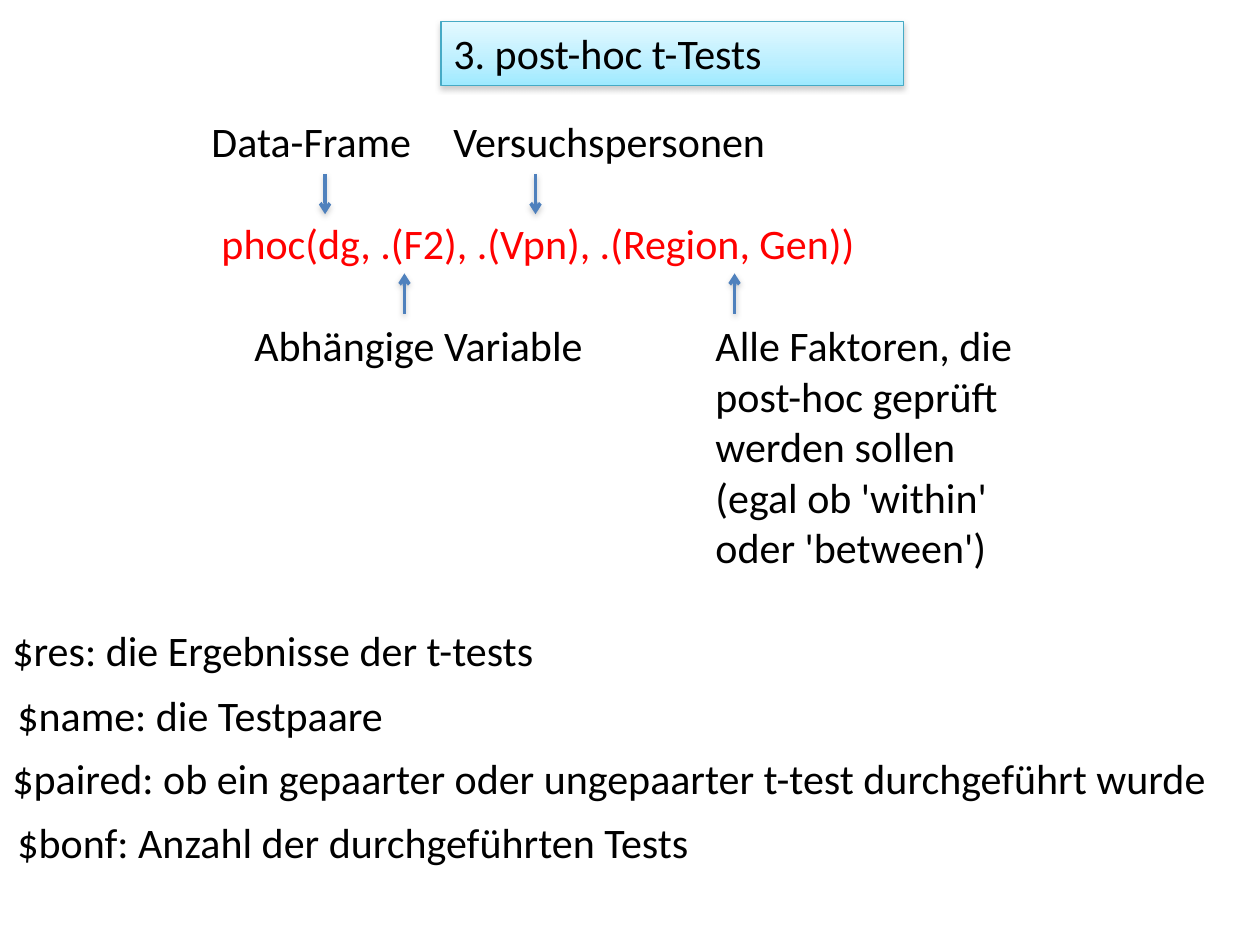
from copy import deepcopy
from typing import NamedTuple

from lxml import etree
from pptx import Presentation
from pptx import util as u
from pptx.dml.color import RGBColor
from pptx.enum import shapes, text
from pptx.oxml import parse_xml
from pptx.oxml.ns import nsdecls, qn

HUES = {"ink": "000000", "code": "FF0000", "arrow": "4F81BD",
        "edge": "46AAC5", "shade": "808080"}
BLEND = [(0, "E4F9FF"), (0.65, "BBEFFF"), (1, "9EEAFF")]


class Label(NamedTuple):
    words: str
    left: float
    top: float
    width: float
    height: float = 0.51
    hue: str = "ink"
    wrap: bool = True


class Arrow(NamedTuple):
    x: float
    start: float
    end: float


TITLE = Label("3. post-hoc t-Tests", 3.5, 0.17, 3.67)
LABELS = [
    Label("phoc(dg, .(F2), .(Vpn), .(Region, Gen))", 1.66, 1.68, 5.3, hue="code"),
    Label("Data-Frame", 1.58, 0.87, 2.08),
    Label("Versuchspersonen", 3.5, 0.87, 2.92),
    Label("Abhängige Variable", 1.92, 2.49, 2.83),
    Label("Alle Faktoren, die post-hoc geprüft werden sollen "
          "(egal ob 'within' oder 'between')", 5.58, 2.49, 2.58, 2.12),
]
RESULTS = [
    ("$res: die Ergebnisse der t-tests", 0, 4.41, False),
    ("$name: die Testpaare", 0.04, 3.17, False),
    ("$paired: ob ein gepaarter oder ungepaarter t-test durchgeführt wurde",
     0, 10.25, True),
    ("$bonf: Anzahl der durchgeführten Tests", 0.04, 5.64, False),
]
LABELS += [Label(words, left, round(4.91 + 0.507 * row, 2), width, wrap=wrap)
           for row, (words, left, width, wrap) in enumerate(RESULTS)]
ARROWS = [Arrow(3.21, 2.49, 2.17), Arrow(2.58, 1.38, 1.7),
          Arrow(5.83, 2.49, 2.17), Arrow(4.25, 1.38, 1.7)]


def tint(name: str) -> RGBColor:
    """Return the named colour."""
    return RGBColor.from_string(HUES[name])


def shade(shape) -> None:
    """Put a soft shadow below a shape or line."""
    shape._element.spPr.append(parse_xml(
        f'<a:effectLst {nsdecls("a")}><a:outerShdw blurRad="{u.Pt(3.1)}" '
        f'dist="{u.Pt(1.6)}" dir="5400000" rotWithShape="0">'
        f'<a:srgbClr val="{HUES["shade"]}"><a:alpha val="38000"/></a:srgbClr>'
        '</a:outerShdw></a:effectLst>'))


def area(label: Label) -> list[u.Length]:
    """Return the position and size of a label."""
    return [u.Inches(n) for n in (label.left, label.top, label.width, label.height)]


def write(shape, label: Label) -> None:
    """Set and format the text of a shape."""
    frame = shape.text_frame
    frame.text = label.words
    frame.word_wrap = label.wrap
    frame.auto_size = text.MSO_AUTO_SIZE.SHAPE_TO_FIT_TEXT
    frame.vertical_anchor = text.MSO_ANCHOR.TOP
    line = frame.paragraphs[0]
    line.alignment = text.PP_ALIGN.LEFT
    font = line.runs[0].font
    font.name, font.size = "Calibri", u.Pt(24)
    font.color.rgb = tint(label.hue)


def draw_label(slide, label: Label) -> None:
    """Add a plain text box."""
    write(slide.shapes.add_textbox(*area(label)), label)


def draw_arrow(slide, arrow: Arrow) -> None:
    """Add a vertical arrow."""
    x, start, end = (u.Inches(n) for n in arrow)
    line = slide.shapes.add_connector(
        shapes.MSO_CONNECTOR.STRAIGHT, x, start, x, end)
    line.line.color.rgb = tint("arrow")
    line.line.width = u.Pt(2)
    etree.SubElement(line.line._get_or_add_ln(), qn("a:tailEnd"), type="arrow")
    shade(line)


def draw_title(slide, label: Label) -> None:
    """Add the title box with its gradient."""
    box = slide.shapes.add_shape(shapes.MSO_SHAPE.RECTANGLE, *area(label))
    box.fill.gradient()
    box.fill.gradient_angle = 270
    stops = next(box._element.spPr.iter(qn("a:gsLst")))
    stops.append(deepcopy(stops[-1]))
    for stop, (place, hue) in zip(box.fill.gradient_stops, BLEND):
        stop.position = place
        stop.color.rgb = RGBColor.from_string(hue)
    box.line.color.rgb = tint("edge")
    box.line.width = u.Pt(0.75)
    shade(box)
    write(box, label)


def main() -> None:
    """Build the slide and save it."""
    deck = Presentation()
    deck.slide_width, deck.slide_height = u.Inches(10), u.Inches(7.5)
    slide = deck.slides.add_slide(deck.slide_layouts[6])
    for label in LABELS:
        draw_label(slide, label)
    for arrow in ARROWS:
        draw_arrow(slide, arrow)
    draw_title(slide, TITLE)
    deck.save("out.pptx")


if __name__ == "__main__":
    main()
